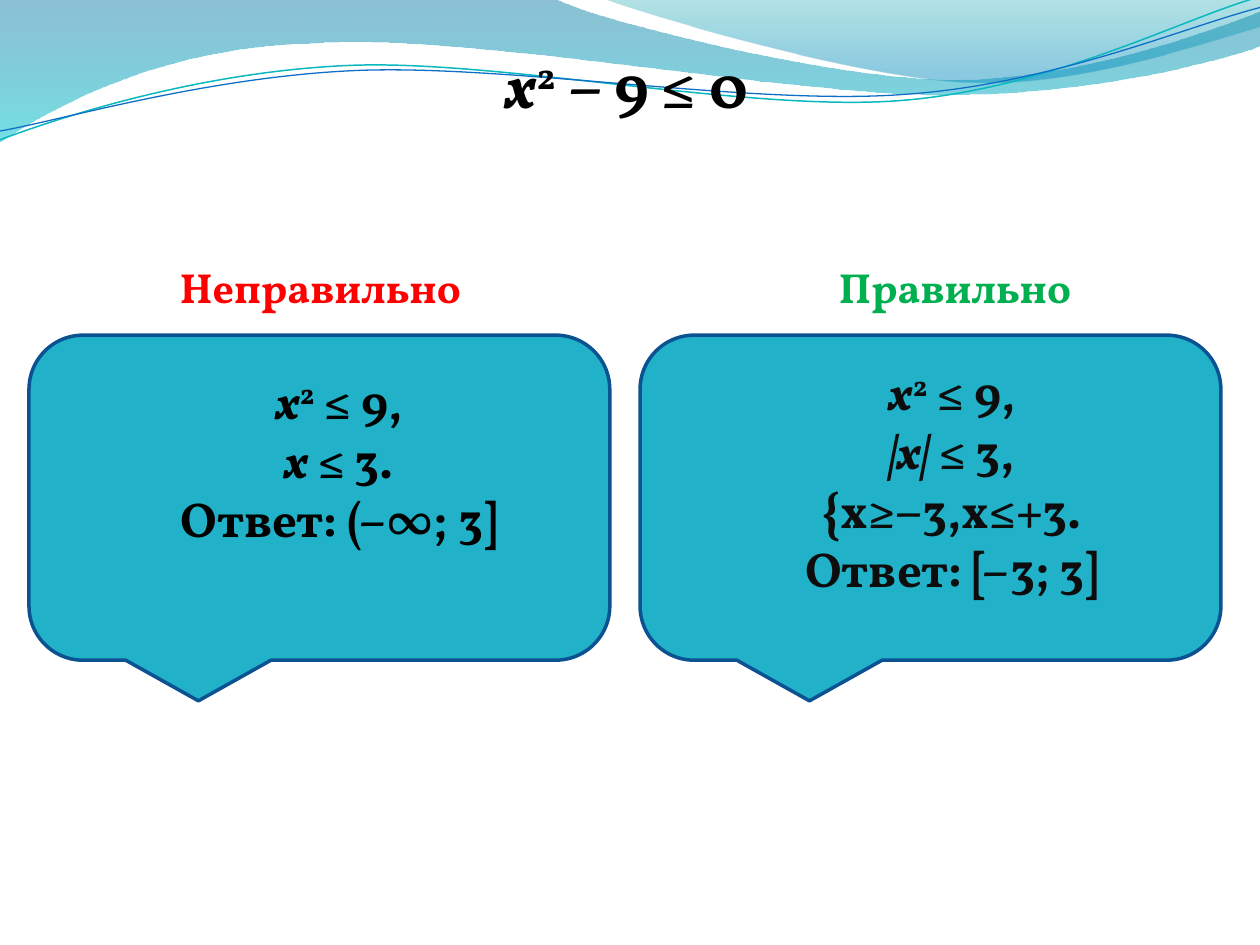
from lxml.etree import SubElement
from pptx import Presentation
from pptx.dml.color import RGBColor
from pptx.enum.shapes import MSO_SHAPE
from pptx.enum.text import MSO_ANCHOR, MSO_AUTO_SIZE, PP_ALIGN
from pptx.oxml.ns import qn
from pptx.util import Inches, Pt

FONT = "Vollkorn"

DEEP_WAVE = [(0, 0), (4.4, -0.01), (4.76, 0.17, 6.64, 0.63, 7.58, 0.63),
             (8.53, 0.63, 9.58, 0.26, 10, 0.09), (10.01, 0.36),
             (9.83, 0.44, 8.7, 0.76, 7.46, 0.75), (6.22, 0.75, 3.82, 0.28, 2.57, 0.34),
             (1.29, 0.36, 0.46, 0.83, -0.01, 1.13), (0, 0)]
LIGHT_WAVE = [(4.79, -0.01), (5.09, 0.11, 6.82, 0.62, 7.69, 0.65),
              (8.56, 0.69, 9.61, 0.32, 10, 0.21), (10, 0), (4.79, -0.01)]
TEAL_STRAND = [(0, 1.11), (0.48, 0.93, 1.58, 0.57, 2.77, 0.52),
               (3.95, 0.47, 5.93, 0.89, 7.13, 0.8), (8.33, 0.71, 9.38, 0.15, 9.98, -0.02)]
BLUE_STRAND = [(0, 1.04), (0.47, 0.96, 1.64, 0.61, 2.83, 0.56),
               (4.03, 0.51, 5.97, 0.84, 7.17, 0.75), (8.36, 0.67, 9.41, 0.21, 10, 0.06)]

X = ("х", "italic")
SQUARED = ("2", "super")
WRONG_STEPS = [[X, SQUARED, (" ≤ 9,", "")], [X, (" ≤ 3.", "")], [("Ответ: (–∞; 3]", "")]]
RIGHT_STEPS = [[X, SQUARED, (" ≤ 9,", "")], [("|х|", "italic"), (" ≤ 3,", "")],
               [("{x≥−3,x≤+3.", "")], [("Ответ: [–3; 3]", "")]]


def color(hex_value):
    """Turn a hex string into a colour."""
    return RGBColor.from_string(hex_value)


def bend(outline, segments):
    """Turn each run of three lines that stands for a cubic into a curve."""
    lines = iter(list(outline._element.iter(qn("a:lnTo"))))
    for segment in segments[1:]:
        first = next(lines)
        if len(segment) == 6:
            curve = first.makeelement(qn("a:cubicBezTo"))
            first.addprevious(curve)
            for line in (first, next(lines), next(lines)):
                curve.append(line[0])
                line.getparent().remove(line)


def add_outline(slide, left, top, segments, close):
    """Draw a curved freeform whose segments are relative to left and top."""
    points = [(Inches(segment[i]), Inches(segment[i + 1]))
              for segment in segments for i in range(0, len(segment), 2)]
    builder = slide.shapes.build_freeform(*points[0], scale=1.0)
    builder.add_line_segments(points[1:], close=close)
    outline = builder.convert_to_shape(Inches(left), Inches(top))
    bend(outline, segments)
    outline.shadow.inherit = False
    return outline


def add_wave(slide, left, top, segments, stops):
    """Draw a wave with a translucent gradient from top to bottom."""
    wave = add_outline(slide, left, top, segments, True)
    wave.line.fill.background()
    wave.fill.gradient()
    wave.fill.gradient_angle = 270
    for stop, (position, tint, _) in zip(wave.fill.gradient_stops, stops):
        stop.position = position
        stop.color.rgb = color(tint)
    for tone, (_, _, opacity) in zip(wave._element.spPr.iter(qn("a:srgbClr")), stops):
        SubElement(tone, qn("a:alpha")).set("val", str(opacity * 1000))


def add_strand(slide, left, top, segments, tint, width):
    """Draw a thin open curve."""
    strand = add_outline(slide, left, top, segments, False)
    strand.fill.background()
    strand.line.color.rgb = color(tint)
    strand.line.width = Pt(width)


def add_header(slide, left, top):
    """Draw the waves and strands along the top of the slide."""
    add_wave(slide, left, top, DEEP_WAVE, [(0, "0074A1", 45), (1, "00C6CF", 55)])
    add_wave(slide, left, top, LIGHT_WAVE, [(0, "00A1A9", 30), (0.8, "008BBF", 45)])
    add_strand(slide, left, top, TEAL_STRAND, "0AB8BF", 0.85)
    add_strand(slide, left, top, BLUE_STRAND, "0F6FC6", 0.75)


def add_text(slide, box, lines, size, tint, align=PP_ALIGN.LEFT, wrap=False,
             anchor=MSO_ANCHOR.TOP):
    """Write lines of styled runs into a text box."""
    frame = slide.shapes.add_textbox(*map(Inches, box)).text_frame
    frame.word_wrap = wrap
    frame.auto_size = MSO_AUTO_SIZE.SHAPE_TO_FIT_TEXT
    frame.vertical_anchor = anchor
    for index, line in enumerate(lines):
        paragraph = frame.add_paragraph() if index else frame.paragraphs[0]
        paragraph.alignment = align
        paragraph.font.name = FONT
        paragraph.font.size = Pt(size)
        paragraph.font.bold = True
        paragraph.font.color.rgb = color(tint)
        for wording, style in line:
            run = paragraph.add_run()
            run.text = wording
            if style == "italic":
                run.font.italic = True
            elif style == "super":
                run._r.get_or_add_rPr().set("baseline", "30000")


def add_callout(slide, left, top):
    """Draw the speech bubble behind a solution."""
    callout = slide.shapes.add_shape(MSO_SHAPE.ROUNDED_RECTANGULAR_CALLOUT, Inches(left),
                                     Inches(top), Inches(4.61), Inches(2.58))
    callout.shadow.inherit = False
    callout.fill.solid()
    callout.fill.fore_color.rgb = color("21B2C9")
    callout.line.color.rgb = color("0B5292")
    callout.line.width = Pt(2)


def add_solution(slide, left, top, heading, heading_box, heading_tint,
                 steps, steps_box, steps_tint, **layout):
    """Draw a callout with its heading above and its solution steps inside."""

    def place(box):
        """Move a box from callout to slide coordinates."""
        return left + box[0], top + box[1], box[2], box[3]

    add_callout(slide, left, top)
    add_text(slide, place(steps_box), steps, 28, steps_tint, PP_ALIGN.CENTER, **layout)
    add_text(slide, place(heading_box), [[(heading, "")]], 24, heading_tint)


def main():
    """Build the slide and save it."""
    presentation = Presentation()
    presentation.slide_width, presentation.slide_height = Inches(10), Inches(7.5)
    slide = presentation.slides.add_slide(presentation.slide_layouts[6])
    add_header(slide, 0, 0)
    add_text(slide, (3.91, 0.31, 2.22, 0.71), [[X, SQUARED, (" – 9 ≤ 0", "")]], 36, "000000")
    add_solution(slide, 0.23, 2.66, "Неправильно", (1.1, -0.63, 2.47, 0.5), "FF0000",
                 WRONG_STEPS, (0.47, 0.23, 3.98, 1.51), "000000", wrap=True)
    add_solution(slide, 5.08, 2.66, "Правильно", (1.48, -0.63, 2.07, 0.5), "00B050",
                 RIGHT_STEPS, (1.17, 0.15, 2.61, 1.99), "0D0D0D", anchor=MSO_ANCHOR.MIDDLE)
    presentation.save("out.pptx")


if __name__ == "__main__":
    main()
